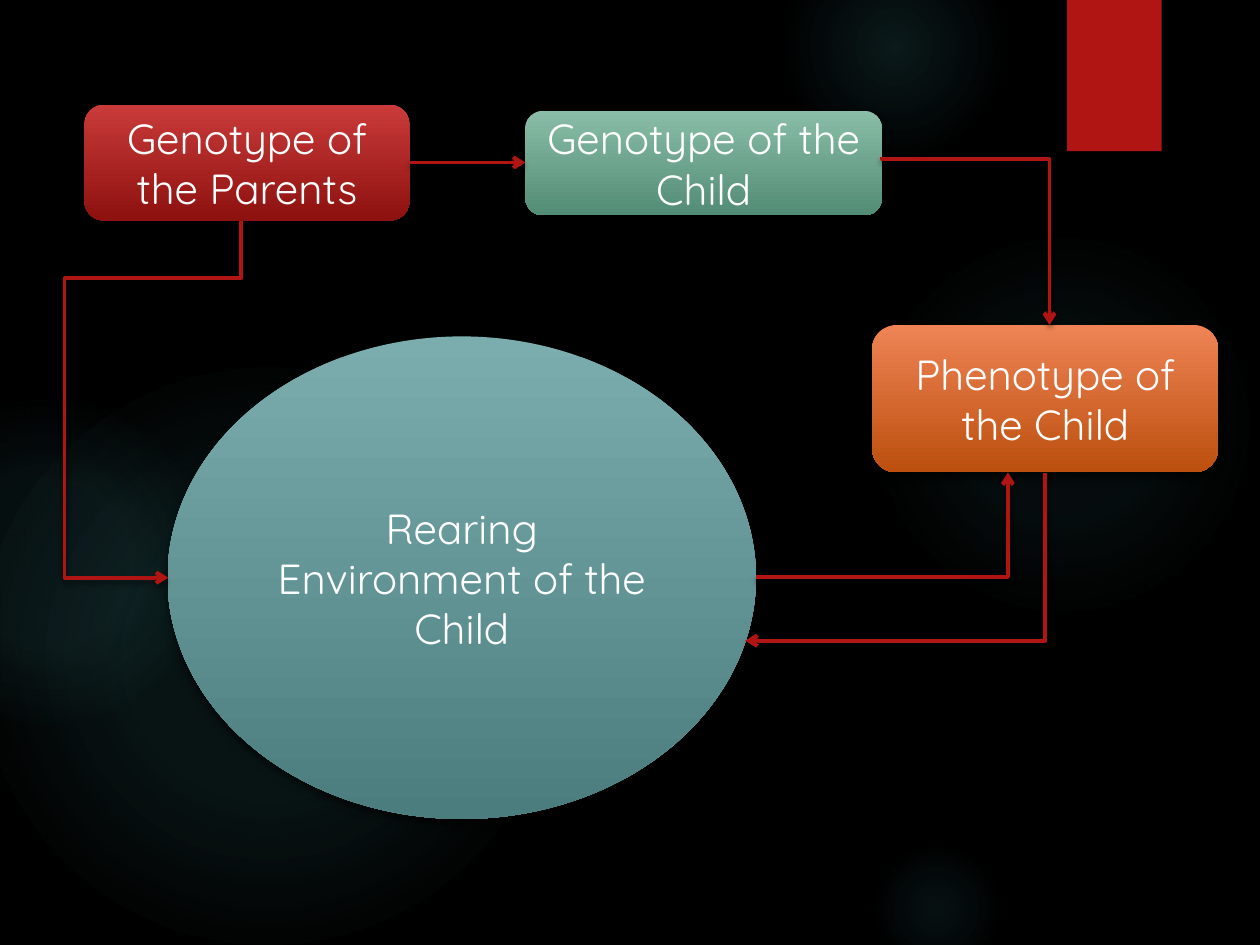
from lxml.etree import SubElement
from pptx import Presentation
from pptx.dml.color import RGBColor
from pptx.enum.shapes import MSO_CONNECTOR, MSO_SHAPE
from pptx.enum.text import MSO_ANCHOR, PP_ALIGN
from pptx.oxml.ns import qn
from pptx.util import Inches, Pt

RED = "B01513"
FONT = "Quicksand"


def paint(color, code):
    color.rgb = RGBColor.from_string(code)


def child(node, tag, **attrs):
    """Append a DrawingML element with the given attributes."""
    return SubElement(node, qn(f"a:{tag}"), {k: str(v) for k, v in attrs.items()})


def tint(node, code, alpha):
    """Append a colour whose opacity is given in percent."""
    child(child(node, "srgbClr", val=code), "alpha", val=alpha * 1000)


def shade(shape, stops, radial=False):
    """Fill with (position, colour, opacity) stops, round or top to bottom."""
    grad = child(shape.element.spPr, "gradFill", rotWithShape=1)
    row = child(grad, "gsLst")
    for pos, code, alpha in stops:
        tint(child(row, "gs", pos=pos * 1000), code, alpha)
    if radial:
        path = child(grad, "path", path="circle")
        child(path, "fillToRect", l=50000, t=50000, r=50000, b=50000)
    else:
        child(grad, "lin", ang=90 * 60000, scaled=0)
    shape.line.fill.background()


def shadow(shape, alpha=45, blur=3, dist=2):
    """Cast a black shadow straight down."""
    group = child(shape.element.spPr, "effectLst")
    drop = child(group, "outerShdw", blurRad=Pt(blur), dist=Pt(dist),
                 dir=90 * 60000, algn="ctr", rotWithShape=0)
    tint(drop, "000000", alpha)


def place(slide, kind, box):
    return slide.shapes.add_shape(kind, *map(Inches, box))


def glow(slide, left, top, size, stops):
    """Draw a soft round light from (position, opacity) stops."""
    disc = place(slide, MSO_SHAPE.OVAL, (left, top, size, size))
    disc.shadow.inherit = False
    shade(disc, [(pos, "50B9C1", alpha) for pos, alpha in stops], radial=True)


def backdrop(slide):
    fill = slide.background.fill
    fill.solid()
    paint(fill.fore_color, "000000")
    glow(slide, 6.89, 1.83, 3.08, [(0, 7), (36, 6), (69, 0)])
    glow(slide, 6.22, -0.5, 1.75, [(0, 14), (36, 7), (73, 0)])
    glow(slide, 6.89, 6.67, 1.08, [(0, 9), (36, 5), (66, 0)])
    glow(slide, -0.17, 2.92, 4.58, [(0, 11), (36, 10), (75, 0)])
    glow(slide, -0.92, 3.17, 2.58, [(0, 8), (36, 8), (72, 0)])
    flag = place(slide, MSO_SHAPE.RECTANGLE, (8.47, 0, 0.75, 1.2))
    flag.fill.solid()
    paint(flag.fill.fore_color, RED)
    flag.line.fill.background()
    shadow(flag)


def node(slide, text, box, top, base, kind=MSO_SHAPE.ROUNDED_RECTANGLE):
    """Draw one labelled stage, shaded from top colour to base colour."""
    shape = place(slide, kind, box)
    shade(shape, [(0, top, 100), (100, base, 100)])
    shadow(shape, 60, 5, 3)
    frame = shape.text_frame
    frame.word_wrap = True
    frame.vertical_anchor = MSO_ANCHOR.MIDDLE
    frame.text = text
    para = frame.paragraphs[0]
    para.alignment = PP_ALIGN.CENTER
    font = para.runs[0].font
    font.name, font.size = FONT, Pt(24)
    paint(font.color, "FFFFFF")


def arrow(slide, box, preset="straightConnector1", turn=0, flip=None, bends=()):
    """Draw an arrow in its unturned box; bends are shares of that box."""
    left, top, width, height = box
    ends = map(Inches, (left, top, left + width, top + height))
    link = slide.shapes.add_connector(MSO_CONNECTOR.ELBOW, *ends)
    props = link.element.spPr
    frame = props.find(qn("a:xfrm"))
    frame.set("rot", str(turn * 60000))
    if flip:
        frame.set(flip, "1")
    geom = props.find(qn("a:prstGeom"))
    geom.set("prst", preset)
    guides = geom.find(qn("a:avLst"))
    for i, share in enumerate(bends, 1):
        child(guides, "gd", name=f"adj{i}", fmla=f"val {round(share * 100000)}")
    link.line.width = Pt(2.25)
    link.line.fill.solid()
    paint(link.line.color, RED)
    child(props.find(qn("a:ln")), "tailEnd", type="arrow")
    shadow(link)


def diagram(slide):
    node(slide, "Rearing Environment of the Child", (1.33, 2.67, 4.67, 3.83),
         "7CADAE", "4C7D7E", MSO_SHAPE.OVAL)
    node(slide, "Phenotype of the Child", (6.92, 2.58, 2.75, 1.17), "EE8455", "BC4F0E")
    node(slide, "Genotype of the Child", (4.17, 0.88, 2.83, 0.83), "89BDA7", "538C74")
    node(slide, "Genotype of the Parents", (0.67, 0.83, 2.58, 0.92), "C93B3A", "8D110F")

    arrow(slide, (3.25, 1.29, 0.92, 0))
    arrow(slide, (7, 1.25, 1.33, 1.33), "bentConnector3", 270, "flipH", [0.01])
    arrow(slide, (0.21, 2.88, 2.83, 0.58), "bentConnector4", 90, bends=[0.16, 2.42])
    arrow(slide, (6, 3.75, 2, 0.83), "bentConnector3", flip="flipV", bends=[1])
    arrow(slide, (6.44, 3.23, 1.33, 2.38), "bentConnector2", 90)


def main():
    deck = Presentation()
    deck.slide_width, deck.slide_height = Inches(10), Inches(7.5)
    slide = deck.slides.add_slide(deck.slide_layouts[6])
    backdrop(slide)
    diagram(slide)
    deck.save("out.pptx")


if __name__ == "__main__":
    main()
